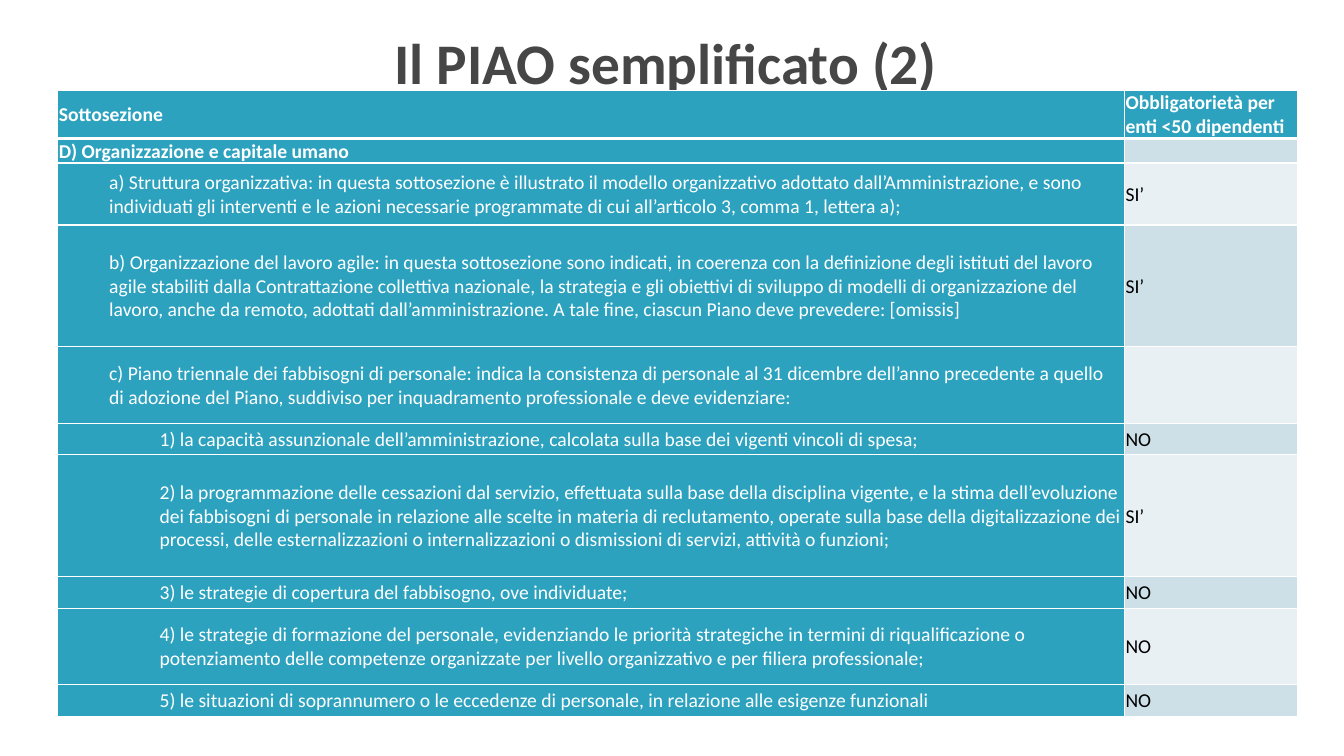
"""Build the slide on the simplified PIAO with its table of subsections."""
from dataclasses import dataclass

from lxml.etree import SubElement
from pptx import Presentation
from pptx.dml.color import RGBColor
from pptx.enum.text import MSO_ANCHOR, MSO_AUTO_SIZE, PP_ALIGN
from pptx.oxml import parse_xml
from pptx.oxml.ns import nsdecls, qn
from pptx.slide import Slide
from pptx.table import _Cell
from pptx.text.text import _Paragraph
from pptx.util import Emu, Pt

PX = 9525
FONT = "Calibri"
BODY_SIZE = 14
LEVEL_INDENT = 48
COLORS = {
    "title": "464646",
    "teal": "2DA2BF",
    "white": "FFFFFF",
    "black": "000000",
    "band_dark": "CDE0E8",
    "band_light": "E8F0F4",
}


@dataclass(frozen=True)
class Row:
    height: int
    section: str
    answer: str = ""
    level: int = 0
    header: bool = False


ROWS = [
    Row(44, "Sottosezione", "Obbligatorietà per enti <50 dipendenti", header=True),
    Row(23, "D) Organizzazione e capitale umano"),
    Row(59, "a) Struttura organizzativa: in questa sottosezione è illustrato il modello "
        "organizzativo adottato dall’Amministrazione, e sono individuati gli interventi e le "
        "azioni necessarie programmate di cui all’articolo 3, comma 1, lettera a);", "SI’", 1),
    Row(116, "b) Organizzazione del lavoro agile: in questa sottosezione sono indicati, in "
        "coerenza con la definizione degli istituti del lavoro agile stabiliti dalla "
        "Contrattazione collettiva nazionale, la strategia e gli obiettivi di sviluppo di "
        "modelli di organizzazione del lavoro, anche da remoto, adottati "
        "dall’amministrazione. A tale fine, ciascun Piano deve prevedere: [omissis]", "SI’", 1),
    Row(73, "c) Piano triennale dei fabbisogni di personale: indica la consistenza di "
        "personale al 31 dicembre dell’anno precedente a quello di adozione del Piano, "
        "suddiviso per inquadramento professionale e deve evidenziare:", "", 1),
    Row(30, "1) la capacità assunzionale dell’amministrazione, calcolata sulla base dei "
        "vigenti vincoli di spesa;", "NO", 2),
    Row(116, "2) la programmazione delle cessazioni dal servizio, effettuata sulla base della "
        "disciplina vigente, e la stima dell’evoluzione dei fabbisogni di personale in "
        "relazione alle scelte in materia di reclutamento, operate sulla base della "
        "digitalizzazione dei processi, delle esternalizzazioni o internalizzazioni o "
        "dismissioni di servizi, attività o funzioni;", "SI’", 2),
    Row(30, "3) le strategie di copertura del fabbisogno, ove individuate;", "NO", 2),
    Row(73, "4) le strategie di formazione del personale, evidenziando le priorità "
        "strategiche in termini di riqualificazione o potenziamento delle competenze "
        "organizzate per livello organizzativo e per filiera professionale;", "NO", 2),
    Row(30, "5) le situazioni di soprannumero o le eccedenze di personale, in relazione alle "
        "esigenze funzionali", "NO", 2),
]
COLUMN_WIDTHS = [1016, 165]


def px(length: int) -> Emu:
    return Emu(length * PX)


def add_run(paragraph: _Paragraph, text: str, size: int, color: str, bold: bool) -> None:
    run = paragraph.add_run()
    run.text = text
    run.font.name = FONT
    run.font.size = Pt(size)
    run.font.bold = bold
    run.font.color.rgb = RGBColor.from_string(COLORS[color])


def set_borders(cell: _Cell, top: int, bottom: int) -> None:
    properties = cell._tc.get_or_add_tcPr()
    widths = {"lnL": 1, "lnR": 1, "lnT": top, "lnB": bottom}
    for position, (side, width) in enumerate(widths.items()):
        properties.insert(position, parse_xml(
            f'<a:{side} {nsdecls("a")} w="{Pt(width)}"><a:solidFill>'
            f'<a:srgbClr val="{COLORS["white"]}"/></a:solidFill></a:{side}>'))


def fill_cell(cell: _Cell, text: str, fill: str, color: str, bold: bool, level: int = 0) -> None:
    cell.vertical_anchor = MSO_ANCHOR.MIDDLE
    cell.margin_left = cell.margin_top = cell.margin_right = px(1)
    cell.margin_bottom = px(0)
    cell.fill.solid()
    cell.fill.fore_color.rgb = RGBColor.from_string(COLORS[fill])
    paragraph = cell.text_frame.paragraphs[0]
    if level:
        paragraph.level = level
        properties = paragraph._p.get_or_add_pPr()
        properties.set("marL", str(px(level * LEVEL_INDENT)))
        properties.set("indent", "0")
    if text:
        add_run(paragraph, text, BODY_SIZE, color, bold)
    else:
        SubElement(paragraph._p, qn("a:endParaRPr"), sz=str(BODY_SIZE * 100))


def add_title(slide: Slide, text: str) -> None:
    title = slide.shapes.add_textbox(px(96), px(21), px(1077), px(76))
    frame = title.text_frame
    frame.word_wrap = True
    frame.auto_size = MSO_AUTO_SIZE.SHAPE_TO_FIT_TEXT
    paragraph = frame.paragraphs[0]
    paragraph.alignment = PP_ALIGN.CENTER
    add_run(paragraph, text, 41, "title", True)


def add_section_table(slide: Slide, rows: list[Row]) -> None:
    total_height = sum(row.height for row in rows)
    frame = slide.shapes.add_table(len(rows), len(COLUMN_WIDTHS), px(55), px(86),
                                   px(sum(COLUMN_WIDTHS)), px(total_height))
    table = frame.table
    table.first_row = table.horz_banding = False
    for column, width in zip(table.columns, COLUMN_WIDTHS):
        column.width = px(width)
    for index, row in enumerate(rows):
        table.rows[index].height = px(row.height)
        section, answer = table.cell(index, 0), table.cell(index, 1)
        for cell in (section, answer):
            set_borders(cell, 3 if index == 1 else 1, 3 if row.header else 1)
        fill_cell(section, row.section, "teal", "white", row.level == 0, row.level)
        band = "band_dark" if index % 2 else "band_light"
        fill_cell(answer, row.answer, "teal" if row.header else band,
                  "white" if row.header else "black", row.header)


def main() -> None:
    presentation = Presentation()
    presentation.slide_width, presentation.slide_height = px(1280), px(720)
    slide = presentation.slides.add_slide(presentation.slide_layouts[6])
    add_title(slide, "Il PIAO semplificato (2)")
    add_section_table(slide, ROWS)
    presentation.save("out.pptx")


if __name__ == "__main__":
    main()
